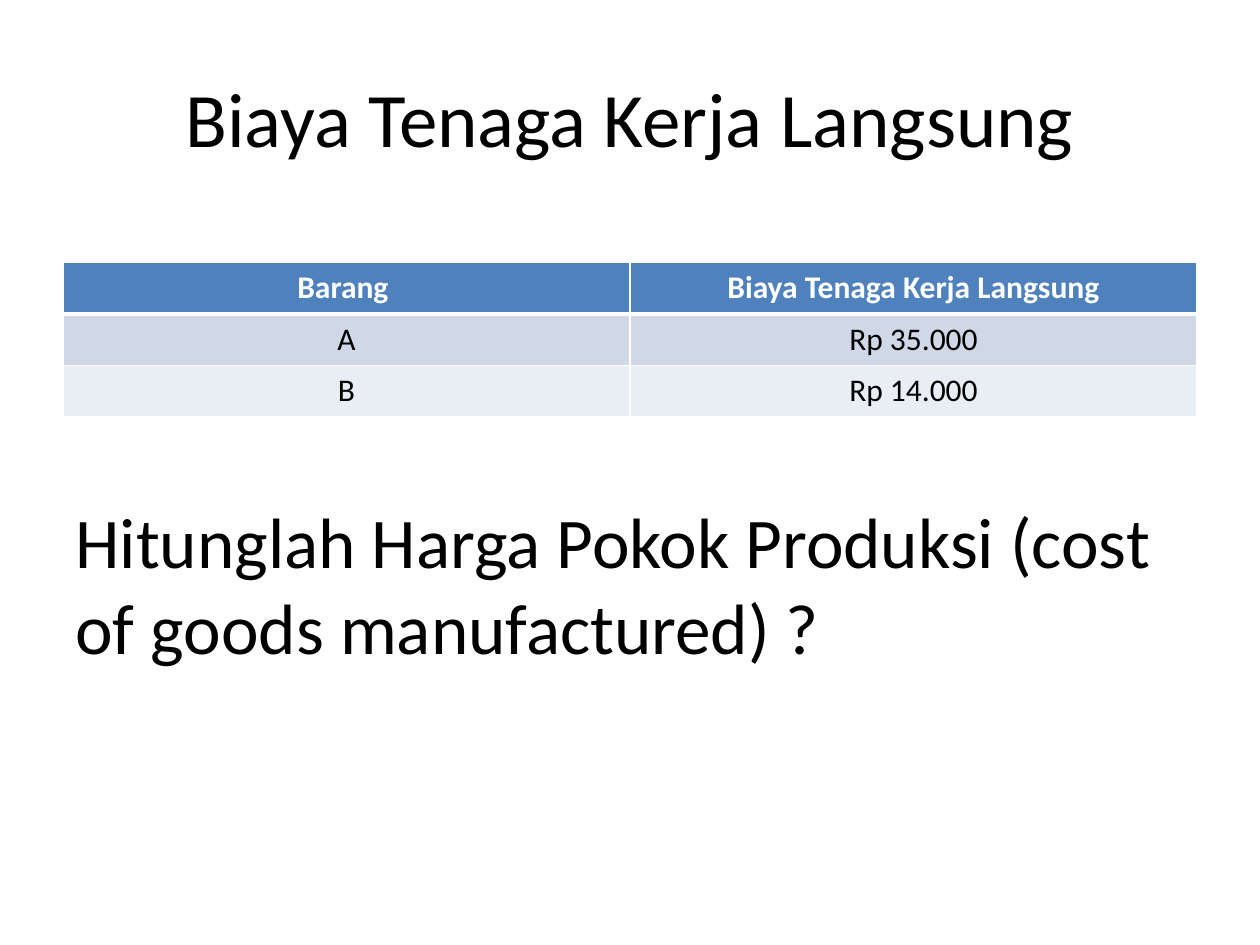
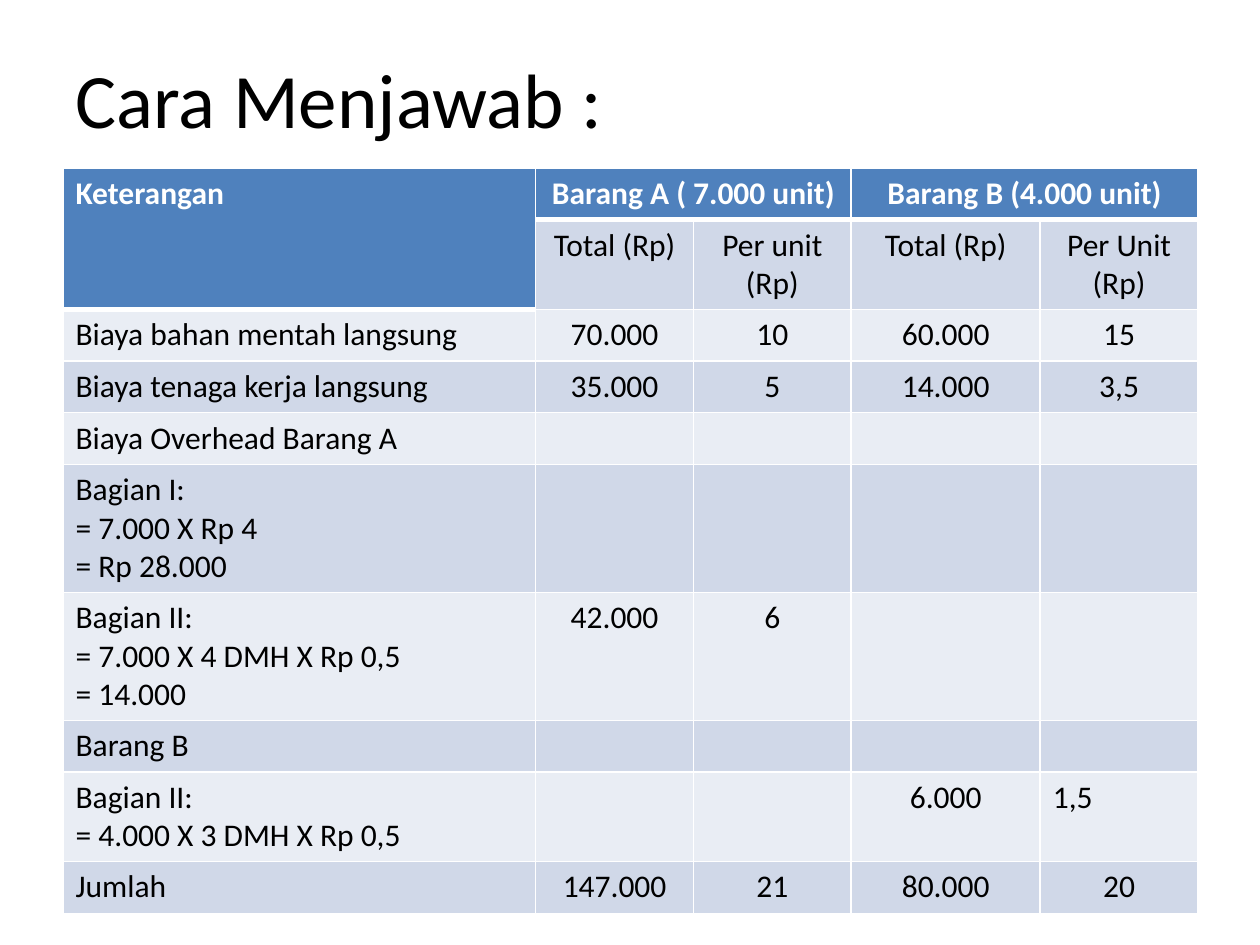
from dataclasses import dataclass

from lxml.etree import SubElement
from pptx import Presentation
from pptx.dml.color import RGBColor
from pptx.enum.text import MSO_ANCHOR, MSO_AUTO_SIZE, PP_ALIGN
from pptx.oxml.ns import qn
from pptx.util import Cm, Pt

COLORS = {
    "text": "000000",
    "header": "4F81BD",
    "odd": "D0D8E8",
    "even": "E9EDF4",
    "white": "FFFFFF",
}
FONT = "Calibri"
LEFT, WIDTH = 1.27, 22.86
ROW_HEIGHT, EXTRA_LINE = 1.04, 0.77


@dataclass(frozen=True)
class Box:
    text: str
    top: float
    height: float
    size: float = 44
    align: PP_ALIGN = PP_ALIGN.LEFT


@dataclass(frozen=True)
class TableSpec:
    top: float
    widths: tuple[float, ...]
    rows: tuple[tuple[str, ...], ...]
    lines: tuple[int, ...]
    spans: tuple[tuple[int, int, int, int], ...] = ()
    left_cells: frozenset[tuple[int, int]] = frozenset()
    header_cells: frozenset[tuple[int, int]] = frozenset()

    def is_header(self, row: int, col: int) -> bool:
        return row == 0 or (row, col) in self.header_cells


LABOUR_TITLE = Box("Biaya Tenaga Kerja Langsung", 0.76, 3.18, align=PP_ALIGN.CENTER)
QUESTION = Box("Hitunglah Harga Pokok Produksi (cost of goods manufactured) ?",
               10.16, 3.18, 40.7)
ANSWER_TITLE = Box("Cara Menjawab :", 0.76, 2.41)

LABOUR_TABLE = TableSpec(
    top=5.29,
    widths=(WIDTH / 2, WIDTH / 2),
    rows=(
        ("Barang ", "Biaya Tenaga Kerja Langsung"),
        ("A", "Rp 35.000"),
        ("B", "Rp 14.000"),
    ),
    lines=(1, 1, 1),
)

ANSWER_ROWS = (
    ("Keterangan", "Barang A ( 7.000 unit)", "", "Barang B (4.000 unit)", ""),
    ("", "Total (Rp)", "Per unit (Rp)", "Total (Rp)", "Per Unit (Rp)"),
    ("Biaya bahan mentah langsung", "70.000", "10", "60.000", "15"),
    ("Biaya tenaga kerja langsung", "35.000", "5", "14.000", "3,5"),
    ("Biaya Overhead Barang A", "", "", "", ""),
    ("Bagian I:\n= 7.000 X Rp 4\n= Rp 28.000", "", "", "", ""),
    ("Bagian II:\n= 7.000 X 4 DMH X Rp 0,5\n= 14.000", "42.000", "6", "", ""),
    ("Barang B", "", "", "", ""),
    ("Bagian II:\n= 4.000 X 3 DMH X Rp 0,5", "", "", "6.000", "1,5"),
    ("Jumlah", "147.000", "21", "80.000", "20"),
)
ANSWER_TABLE = TableSpec(
    top=3.39,
    widths=(9.53, 3.18, 3.18, 3.81, 3.18),
    rows=ANSWER_ROWS,
    lines=(1, 2, 1, 1, 1, 3, 3, 1, 2, 1),
    spans=((0, 0, 1, 0), (0, 1, 0, 2), (0, 3, 0, 4)),
    left_cells=frozenset({(r, 0) for r in range(len(ANSWER_ROWS))} | {(8, 4)}),
    header_cells=frozenset({(1, 0)}),
)


def rgb(name: str) -> RGBColor:
    return RGBColor.from_string(COLORS[name])


def format_text(tf, size: float, color: str, align: PP_ALIGN, bold: bool = False) -> None:
    for p in tf.paragraphs:
        p.alignment = align
        for r in p.runs:
            for name, value in {"name": FONT, "size": Pt(size), "bold": bold}.items():
                setattr(r.font, name, value)
            r.font.color.rgb = rgb(color)


def fill_box(sp, box: Box) -> None:
    place = {"left": LEFT, "top": box.top, "width": WIDTH, "height": box.height}
    for name, value in place.items():
        setattr(sp, name, Cm(value))
    tf = sp.text_frame
    tf.text = box.text
    frame = {"word_wrap": True, "auto_size": MSO_AUTO_SIZE.NONE,
             "vertical_anchor": MSO_ANCHOR.MIDDLE}
    for name, value in frame.items():
        setattr(tf, name, value)
    format_text(tf, box.size, "text", box.align)


def add_borders(cell, top: float, bottom: float) -> None:
    tc_pr = cell._tc.get_or_add_tcPr()
    for side, width in {"L": 1, "R": 1, "T": top, "B": bottom}.items():
        ln = SubElement(tc_pr, qn(f"a:ln{side}"), w=str(Pt(width)))
        fill = SubElement(ln, qn("a:solidFill"))
        SubElement(fill, qn("a:srgbClr"), val=COLORS["white"])


def draw_table(s, spec: TableSpec) -> None:
    heights = [ROW_HEIGHT + EXTRA_LINE * (n - 1) for n in spec.lines]
    table = s.shapes.add_table(len(spec.rows), len(spec.widths), Cm(LEFT), Cm(spec.top),
                               Cm(WIDTH), Cm(sum(heights))).table
    for column, width in zip(table.columns, spec.widths):
        column.width = Cm(width)
    for row, height in zip(table.rows, heights):
        row.height = Cm(height)
    for r, texts in enumerate(spec.rows):
        for c, text in enumerate(texts):
            cell = table.cell(r, c)
            header = spec.is_header(r, c)
            below_header = r > 0 and not header and spec.is_header(r - 1, c)
            add_borders(cell, 3 if below_header else 1, 3 if header else 1)
            cell.fill.solid()
            cell.fill.fore_color.rgb = rgb("header" if header else "odd" if r % 2 else "even")
            if text:
                cell.text = text
            align = PP_ALIGN.LEFT if (r, c) in spec.left_cells else PP_ALIGN.CENTER
            format_text(cell.text_frame, 18, "white" if header else "text", align, header)
    for top, left, bottom, right in spec.spans:
        table.cell(top, left).merge(table.cell(bottom, right))


def add_table_slide(prs, title: Box, spec: TableSpec):
    s = prs.slides.add_slide(prs.slide_layouts[5])
    s.background.fill.solid()
    s.background.fill.fore_color.rgb = rgb("white")
    fill_box(s.shapes.title, title)
    draw_table(s, spec)
    return s


def main() -> None:
    prs = Presentation()
    prs.slide_width, prs.slide_height = Cm(25.4), Cm(19.05)
    s = add_table_slide(prs, LABOUR_TITLE, LABOUR_TABLE)
    fill_box(s.shapes.add_textbox(0, 0, 0, 0), QUESTION)
    add_table_slide(prs, ANSWER_TITLE, ANSWER_TABLE)
    prs.save("out.pptx")


if __name__ == "__main__":
    main()
